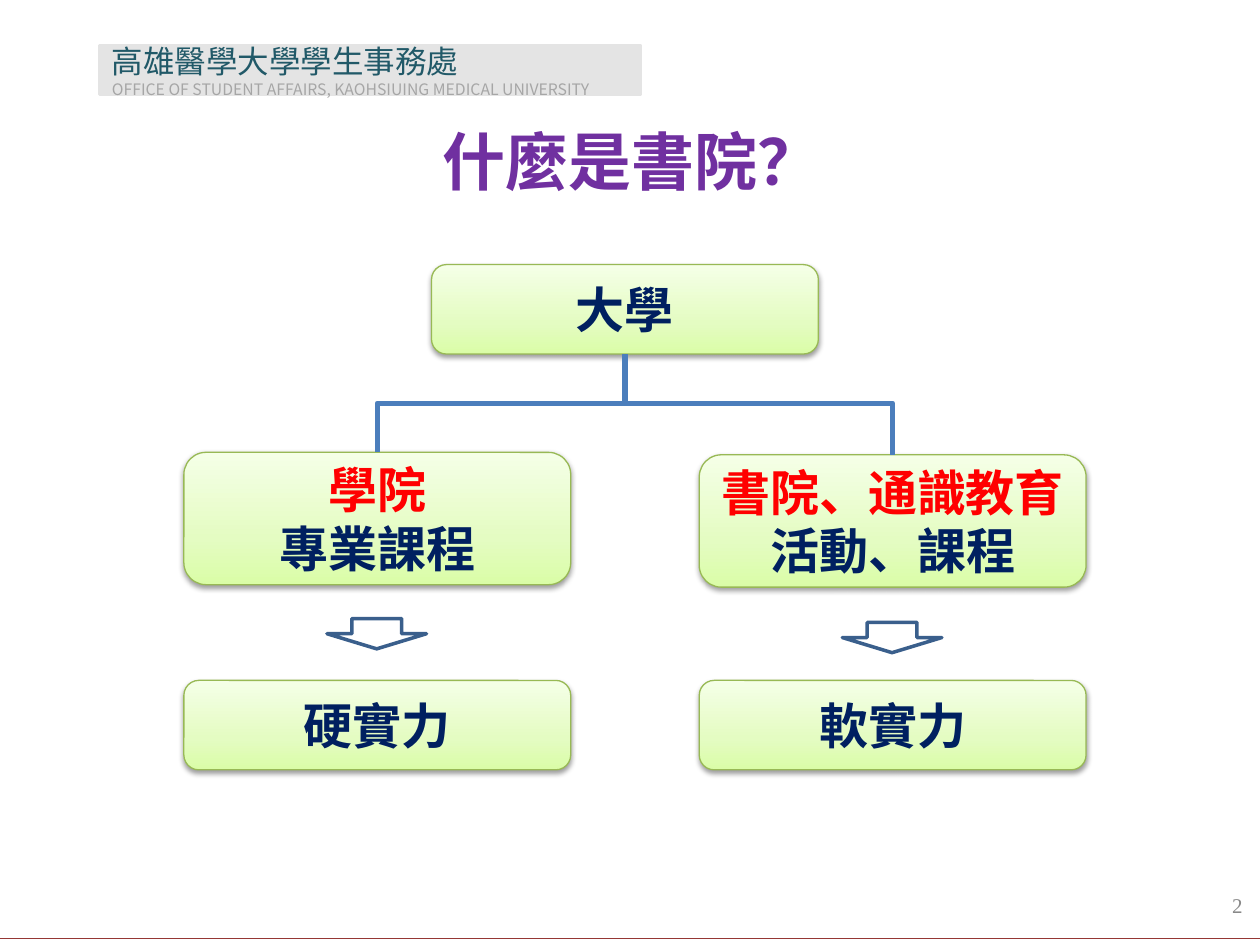
from lxml import etree
from pptx import Presentation
from pptx.dml.color import RGBColor
from pptx.enum.shapes import MSO_CONNECTOR as Link, MSO_SHAPE as Kind
from pptx.enum.text import MSO_ANCHOR as Anchor, PP_ALIGN as Align
from pptx.oxml import parse_xml
from pptx.oxml.ns import nsdecls, qn
from pptx.util import Inches, Pt

NAVY = RGBColor(0x00, 0x20, 0x60)
RED = RGBColor(0xFF, 0x00, 0x00)
PURPLE = RGBColor(0x70, 0x30, 0xA0)
TEAL = RGBColor(0x21, 0x59, 0x68)
SILVER = RGBColor(0xA6, 0xA6, 0xA6)
GRAY = RGBColor(0x89, 0x89, 0x89)
PALE = RGBColor(0xE4, 0xE4, 0xE4)
WHITE = RGBColor(0xFF, 0xFF, 0xFF)
GREEN = RGBColor(0x98, 0xB9, 0x55)
STEEL = RGBColor(0x3A, 0x5F, 0x8C)
BLUE = RGBColor(0x4B, 0x7E, 0xBC)
MAROON = RGBColor(0x95, 0x37, 0x35)
STOPS = [(0, "DAFDA7"), (35, "E4FCC2"), (100, "F5FFE7")]
SANS, SERIF = "Noto Sans CJK SC", "Times New Roman"

HEAD = [("高雄醫學大學學生事務處", 18, TEAL),
        ("OFFICE OF STUDENT AFFAIRS, KAOHSIUING MEDICAL UNIVERSITY", 9, SILVER)]
TITLE = "什麼是書院？"
ROOT = "大學"
SIDES = [
    {"left": 1.46, "top": 3.59, "arrow": 4.91,
     "name": "學院", "means": "專業課程", "power": "硬實力"},
    {"left": 5.55, "top": 3.61, "arrow": 4.94,
     "name": "書院、通識教育", "means": "活動、課程", "power": "軟實力"},
]
WIDE, LOW, TALL = 3.07, 0.71, 1.05
STEM, BAR = 4.96, 3.2

deck = Presentation()
deck.slide_width, deck.slide_height = Inches(10), Inches(7.5)
slide = deck.slides.add_slide(deck.slide_layouts[6])
shapes = slide.shapes


def write(shape, lines, align, face=SANS, bold=False):
    frame = shape.text_frame
    frame.word_wrap = True
    frame.vertical_anchor = Anchor.MIDDLE
    for i, (text, size, color) in enumerate(lines):
        para = frame.add_paragraph() if i else frame.paragraphs[0]
        para.text = text
        para.alignment = align
        font = para.font
        font.name, font.size, font.bold = face, Pt(size), bold
        font.color.rgb = color
        base = para._p.pPr.find(qn("a:defRPr"))
        etree.SubElement(base, qn("a:ea"), typeface=SANS)


def label(text, at, size, color, align, bold=False):
    box = shapes.add_textbox(*map(Inches, at))
    write(box, [(text, size, color)], align, SERIF, bold)


def draw(kind, at, edge, width, fill=None):
    shape = shapes.add_shape(kind, *map(Inches, at))
    shape.shadow.inherit = False
    if fill is not None:
        shape.fill.solid()
        shape.fill.fore_color.rgb = fill
    shape.line.color.rgb = edge
    shape.line.width = Pt(width)
    return shape


def card(left, top, high, lines):
    shape = draw(Kind.ROUNDED_RECTANGLE, (left, top, WIDE, high), GREEN, 0.75)
    props = shape._element.spPr
    stops = "".join(f'<a:gs pos="{pos * 1000}"><a:srgbClr val="{color}"/></a:gs>'
                    for pos, color in STOPS)
    props.insert(2, parse_xml(
        f'<a:gradFill {nsdecls("a")}><a:gsLst>{stops}</a:gsLst>'
        '<a:lin ang="16200000" scaled="0"/></a:gradFill>'))
    props.find(qn("a:effectLst")).append(parse_xml(
        f'<a:outerShdw {nsdecls("a")} blurRad="{Pt(3.1)}" dist="{Pt(1.6)}" '
        'dir="5400000" rotWithShape="0"><a:srgbClr val="000000">'
        '<a:alpha val="38000"/></a:srgbClr></a:outerShdw>'))
    write(shape, [(text, 28, color) for text, color in lines], Align.CENTER, bold=True)
    return shape


def join(kind, start, end, color, width):
    line = shapes.add_connector(kind, *map(Inches, start + end))
    line.line.color.rgb = color
    line.line.width = Pt(width)
    props = line._element.spPr
    etree.SubElement(props, qn("a:effectLst"))
    if kind == Link.ELBOW:
        props.find(qn("a:prstGeom")).set("prst", "bentConnector2")
    return line


join(Link.STRAIGHT, (0, 7.45), (10, 7.45), MAROON, 0.75)
write(draw(Kind.RECTANGLE, (0.79, 0.36, 4.29, 0.39), PALE, 2, PALE), HEAD, Align.LEFT)
label(TITLE, (0.83, 0.92, 8.36, 0.71), 36, PURPLE, Align.CENTER, True)
label("2", (7.63, 6.98, 2.33, 0.4), 12, GRAY, Align.RIGHT)

root = card(STEM - WIDE / 2, 2.1, LOW, [(ROOT, NAVY)])
for side in SIDES:
    left, top = side["left"], side["top"]
    mid = left + WIDE / 2
    card(left, top, TALL, [(side["name"], RED), (side["means"], NAVY)])
    card(left, 5.4, LOW, [(side["power"], NAVY)])
    draw(Kind.DOWN_ARROW, (mid - 0.4, side["arrow"], 0.79, 0.24), STEEL, 2, WHITE)
    join(Link.ELBOW, (STEM, BAR), (mid, top), BLUE, 3)
stem = join(Link.STRAIGHT, (STEM, 2.1 + LOW), (STEM, BAR), BLUE, 3)
stem.begin_connect(root, 2)

deck.save("out.pptx")
